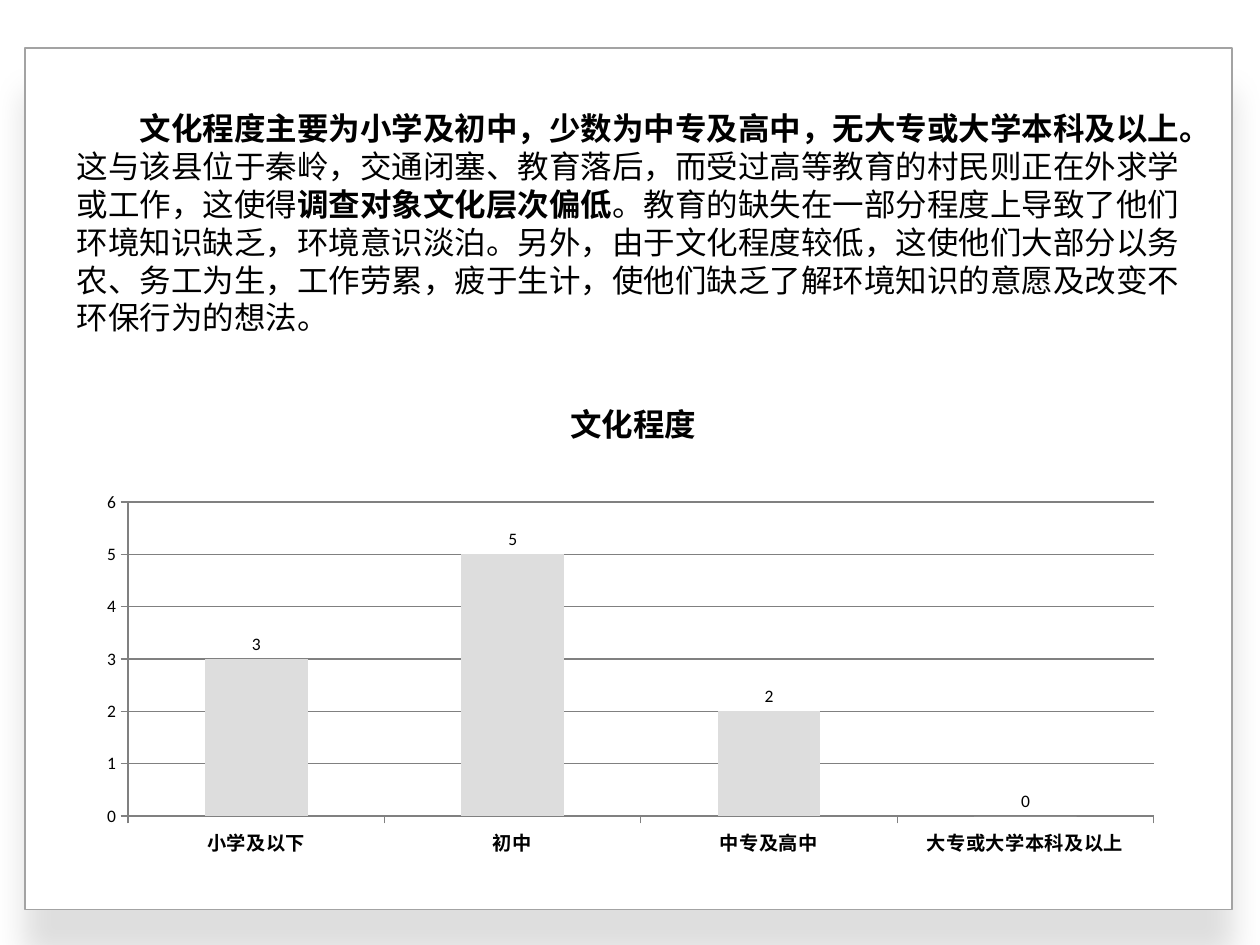
from dataclasses import dataclass

from lxml.etree import SubElement
from pptx import Presentation
from pptx.chart.data import CategoryChartData
from pptx.dml.color import RGBColor
from pptx.enum.chart import XL_CHART_TYPE, XL_LABEL_POSITION, XL_TICK_MARK
from pptx.enum.shapes import MSO_SHAPE
from pptx.enum.text import MSO_AUTO_SIZE
from pptx.oxml import parse_xml
from pptx.oxml.ns import nsdecls, qn
from pptx.util import Emu, Pt

PX = 9144  # EMU per px, 100 px to the inch
CJK_FONT = "Noto Sans CJK SC"
LATIN_FONT = "Calibri"
BLACK, WHITE, GRAY = "000000", "FFFFFF", "808080"


@dataclass
class Box:
    left: int
    top: int
    width: int
    height: int

    def emu(self) -> tuple:
        return tuple(Emu(n * PX) for n in (self.left, self.top, self.width, self.height))


@dataclass
class Passage:
    text: str
    bold: bool = False


@dataclass
class Level:
    name: str
    count: int


PASSAGES = [
    Passage("文化程度主要为小学及初中，少数为中专及高中，无大专或大学本科及以上。", True),
    Passage("这与该县位于秦岭，交通闭塞、教育落后，而受过高等教育的村民则正在外求学或工作，这使得"),
    Passage("调查对象文化层次偏低", True),
    Passage("。教育的缺失在一部分程度上导致了他们环境知识缺乏，环境意识淡泊。另外，由于文化程度较低，"
            "这使他们大部分以务农、务工为生，工作劳累，疲于生计，使他们缺乏了解环境知识的意愿及改变不环保行为的想法。"),
]
LEVELS = [
    Level("小学及以下", 3),
    Level("初中", 5),
    Level("中专及高中", 2),
    Level("大专或大学本科及以上", 0),
]


def color(value: str) -> RGBColor:
    return RGBColor.from_string(value)


def style_font(font, size: float, bold: bool, name: str) -> None:
    font.size, font.bold, font.name = Pt(size), bold, name
    font.color.rgb = color(BLACK)


def add_styled_run(paragraph, text: str, bold: bool) -> None:
    run = paragraph.add_run()
    run.text = text
    style_font(run.font, 18, bold, CJK_FONT)
    SubElement(run.font._element, qn("a:ea"), typeface=CJK_FONT)


def add_card(slide, box: Box) -> None:
    card = slide.shapes.add_shape(MSO_SHAPE.RECTANGLE, *box.emu())
    card.fill.solid()
    card.fill.fore_color.rgb = color(WHITE)
    card.line.color.rgb = color("A3A3A3")
    card.line.width = Pt(1)
    card.shadow.inherit = False
    # Soft shadow falling straight down
    effects = card._element.spPr.find(qn("a:effectLst"))
    effects.append(parse_xml(
        f'<a:outerShdw {nsdecls("a")} blurRad="{Pt(18)}" dist="{Pt(26)}" dir="5400000" '
        'algn="t" rotWithShape="0"><a:srgbClr val="000000"><a:alpha val="12000"/>'
        '</a:srgbClr></a:outerShdw>'))


def add_commentary(slide, box: Box, passages: list[Passage]) -> None:
    frame = slide.shapes.add_textbox(*box.emu()).text_frame
    frame.word_wrap = True
    frame.auto_size = MSO_AUTO_SIZE.SHAPE_TO_FIT_TEXT
    paragraph = frame.paragraphs[0]
    paragraph.line_spacing = Pt(21.6)
    paragraph._p.get_or_add_pPr().set("indent", str(50 * PX))
    for passage in passages:
        add_styled_run(paragraph, passage.text, passage.bold)


def manual_layout(target: str, **fractions: float):
    """Build a layout whose values are fractions of the chart's size."""
    inner = '<c:layoutTarget val="inner"/>' if target == "inner" else ""
    modes = '<c:xMode val="edge"/><c:yMode val="edge"/>'
    values = "".join(f'<c:{key} val="{value}"/>' for key, value in fractions.items())
    return parse_xml(f'<c:layout {nsdecls("c")}><c:manualLayout>{inner}{modes}{values}'
                     '</c:manualLayout></c:layout>')


def drop_layout(element) -> None:
    for layout in element.findall(qn("c:layout")):
        element.remove(layout)


def style_axis(axis, size: float, bold: bool, font_name: str) -> None:
    axis.major_tick_mark = XL_TICK_MARK.OUTSIDE
    axis.minor_tick_mark = XL_TICK_MARK.NONE
    axis.format.line.color.rgb = color(GRAY)
    axis.format.line.width = Pt(0.75)
    style_font(axis.tick_labels.font, size, bold, font_name)


def add_level_chart(slide, box: Box, title: str, levels: list[Level]) -> None:
    data = CategoryChartData()
    data.categories = [level.name for level in levels]
    data.add_series("Series 1", [level.count for level in levels])
    chart = slide.shapes.add_chart(XL_CHART_TYPE.COLUMN_CLUSTERED, *box.emu(), data).chart
    style_font(chart.font, 10, False, LATIN_FONT)
    chart.has_legend = False

    # Title
    chart.has_title = True
    add_styled_run(chart.chart_title.text_frame.paragraphs[0], title, True)
    heading = chart.chart_title._element
    drop_layout(heading)
    heading.find(qn("c:tx")).addnext(manual_layout("outer", x=0.44, y=0.06))

    # Plot area
    plot_area = chart._chartSpace.chart.plotArea
    drop_layout(plot_area)
    plot_area.insert(0, manual_layout("inner", x=0.04, y=0.28, w=0.94, h=0.62))

    # Axes
    style_axis(chart.category_axis, 11, True, LATIN_FONT)
    counts = chart.value_axis
    style_axis(counts, 10, False, LATIN_FONT)
    counts.minimum_scale, counts.maximum_scale, counts.major_unit = 0, 6, 1
    counts.has_major_gridlines = True
    counts.major_gridlines.format.line.color.rgb = color(GRAY)
    counts.major_gridlines.format.line.width = Pt(0.75)

    # Columns and their labels
    plot = chart.plots[0]
    plot.gap_width = 150
    plot.vary_by_categories = False
    columns = plot.series[0]
    columns.format.fill.solid()
    columns.format.fill.fore_color.rgb = color("DDDDDD")
    labels = columns.data_labels
    labels.show_value = True
    labels.position = XL_LABEL_POSITION.OUTSIDE_END
    style_font(labels.font, 10, False, LATIN_FONT)


def main() -> None:
    deck = Presentation()
    deck.slide_width, deck.slide_height = Emu(1000 * PX), Emu(750 * PX)
    slide = deck.slides.add_slide(deck.slide_layouts[6])
    add_card(slide, Box(20, 38, 958, 684))
    add_level_chart(slide, Box(67, 286, 866, 402), "文化程度", LEVELS)
    add_commentary(slide, Box(51, 82, 898, 214), PASSAGES)
    deck.save("out.pptx")


if __name__ == "__main__":
    main()
